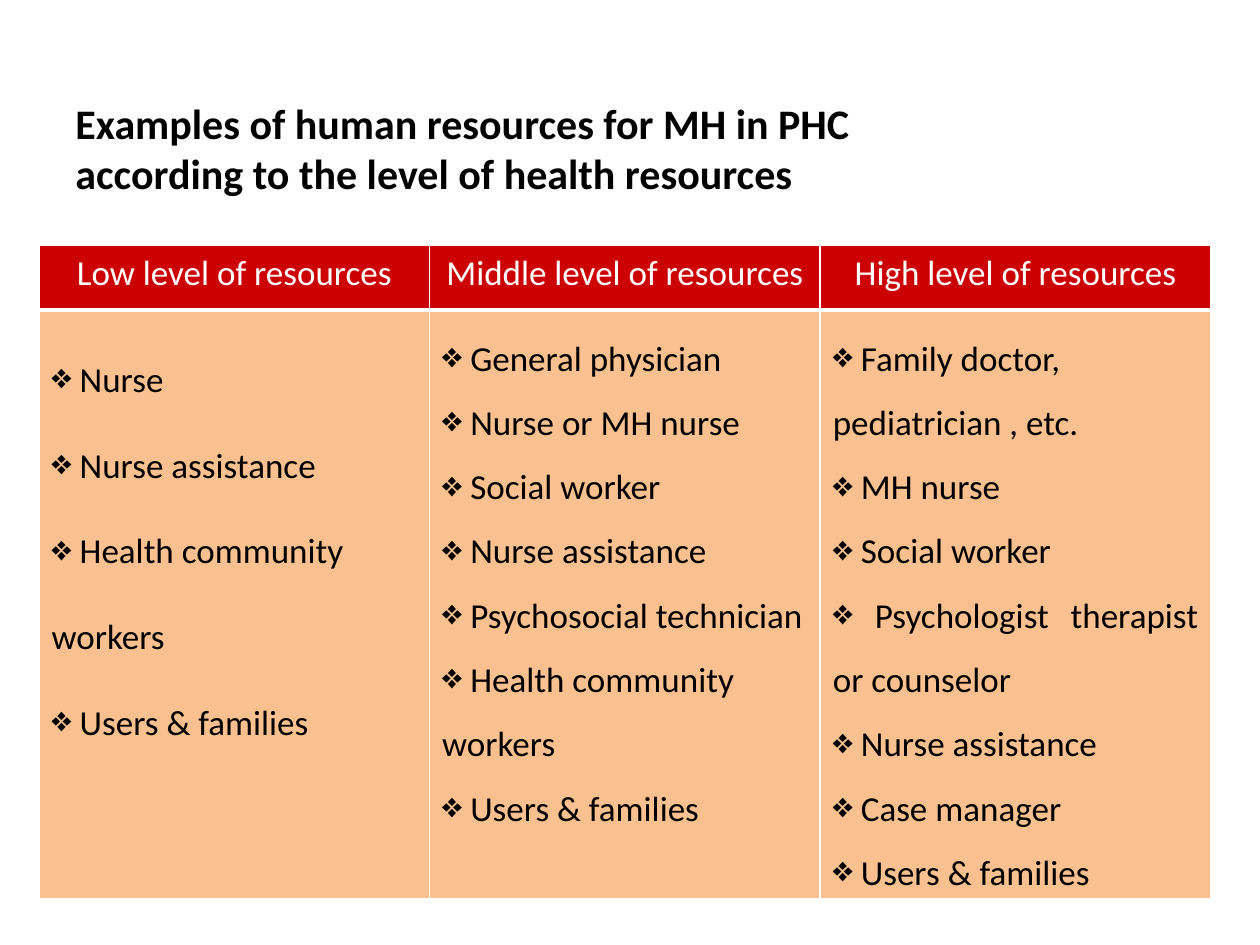
from lxml import etree
from pptx import Presentation
from pptx import util as u
from pptx.dml.color import RGBColor
from pptx.enum import text
from pptx.oxml import ns

BLACK = RGBColor(0x00, 0x00, 0x00)
WHITE = RGBColor(0xFF, 0xFF, 0xFF)
RED = RGBColor(0xCC, 0x00, 0x00)
PEACH = RGBColor(0xFA, 0xC0, 0x90)

TITLE = "Examples of human resources for MH in PHC according to the level of health resources"
UNBULLETED = {"pediatrician , etc."}
JUSTIFIED = {"Psychologist therapist or counselor"}
LEVELS = [
    ("Low level of resources", 2.0, [
        "Nurse", "Nurse assistance", "Health community workers", "Users & families"]),
    ("Middle level of resources", 1.5, [
        "General physician", "Nurse or MH nurse", "Social worker", "Nurse assistance",
        "Psychosocial technician", "Health community workers", "Users & families"]),
    ("High level of resources", 1.5, [
        "Family doctor,", "pediatrician , etc.", "MH nurse", "Social worker",
        "Psychologist therapist or counselor", "Nurse assistance", "Case manager",
        "Users & families"]),
]


class SlideBuilder:
    font_name = "Calibri"
    title_size = 24
    body_size = 20
    bullet = "❖"

    def __init__(self, presentation):
        self.width = presentation.slide_width
        self.height = presentation.slide_height
        self.slide = presentation.slides.add_slide(presentation.slide_layouts[6])

    def box(self, left, top, width, height):
        return (int(self.width * left / 100), int(self.height * top / 100),
                int(self.width * width / 100), int(self.height * height / 100))

    def style(self, paragraph, size, color, bold=False):
        for run in paragraph.runs:
            run.font.name = self.font_name
            run.font.size = u.Pt(size)
            run.font.bold = bold
            run.font.color.rgb = color

    def title(self, wording, *place):
        frame = self.slide.shapes.add_textbox(*self.box(*place)).text_frame
        frame.word_wrap = True
        frame.vertical_anchor = text.MSO_ANCHOR.MIDDLE
        frame.text = wording
        self.style(frame.paragraphs[0], self.title_size, BLACK, True)

    def paint(self, cell, fill, bottom_width):
        properties = cell._tc.get_or_add_tcPr()
        for side, width in zip("LRTB", (1, 1, 1, bottom_width)):
            line = etree.SubElement(properties, ns.qn(f"a:ln{side}"), w=str(u.Pt(width)))
            solid = etree.SubElement(line, ns.qn("a:solidFill"))
            etree.SubElement(solid, ns.qn("a:srgbClr"), val=str(WHITE))
        cell.fill.solid()
        cell.fill.fore_color.rgb = fill

    def header(self, cell, wording):
        self.paint(cell, RED, 3)
        cell.text_frame.text = wording
        paragraph = cell.text_frame.paragraphs[0]
        paragraph.alignment = text.PP_ALIGN.CENTER
        self.style(paragraph, self.body_size, WHITE)

    def bullets(self, cell, items, spacing):
        self.paint(cell, PEACH, 1)
        cell.text_frame.text = "\n".join(
            item if item in UNBULLETED else f" {item}" for item in items)
        for item, paragraph in zip(items, cell.text_frame.paragraphs):
            paragraph.line_spacing = spacing
            if item in JUSTIFIED:
                paragraph.alignment = text.PP_ALIGN.JUSTIFY
            if item not in UNBULLETED:
                properties = paragraph._p.get_or_add_pPr()
                etree.SubElement(properties, ns.qn("a:buChar"), char=self.bullet)
            self.style(paragraph, self.body_size, BLACK)

    def table(self, levels, left, top, width, row_heights):
        place = self.box(left, top, width, sum(row_heights))
        table = self.slide.shapes.add_table(len(row_heights), len(levels), *place).table
        table.horz_banding = False
        for row, height in zip(table.rows, row_heights):
            row.height = int(self.height * height / 100)
        for column, (heading, spacing, items) in enumerate(levels):
            self.header(table.cell(0, column), heading)
            self.bullets(table.cell(1, column), items, spacing)


def main():
    presentation = Presentation()
    presentation.slide_width = u.Inches(10)
    presentation.slide_height = u.Inches(7.5)
    builder = SlideBuilder(presentation)
    builder.title(TITLE, 5, 7.33, 68.9, 16.67)
    builder.table(LEVELS, 3.1, 26, 93, (6.8, 62.27))
    presentation.save("out.pptx")


if __name__ == "__main__":
    main()
